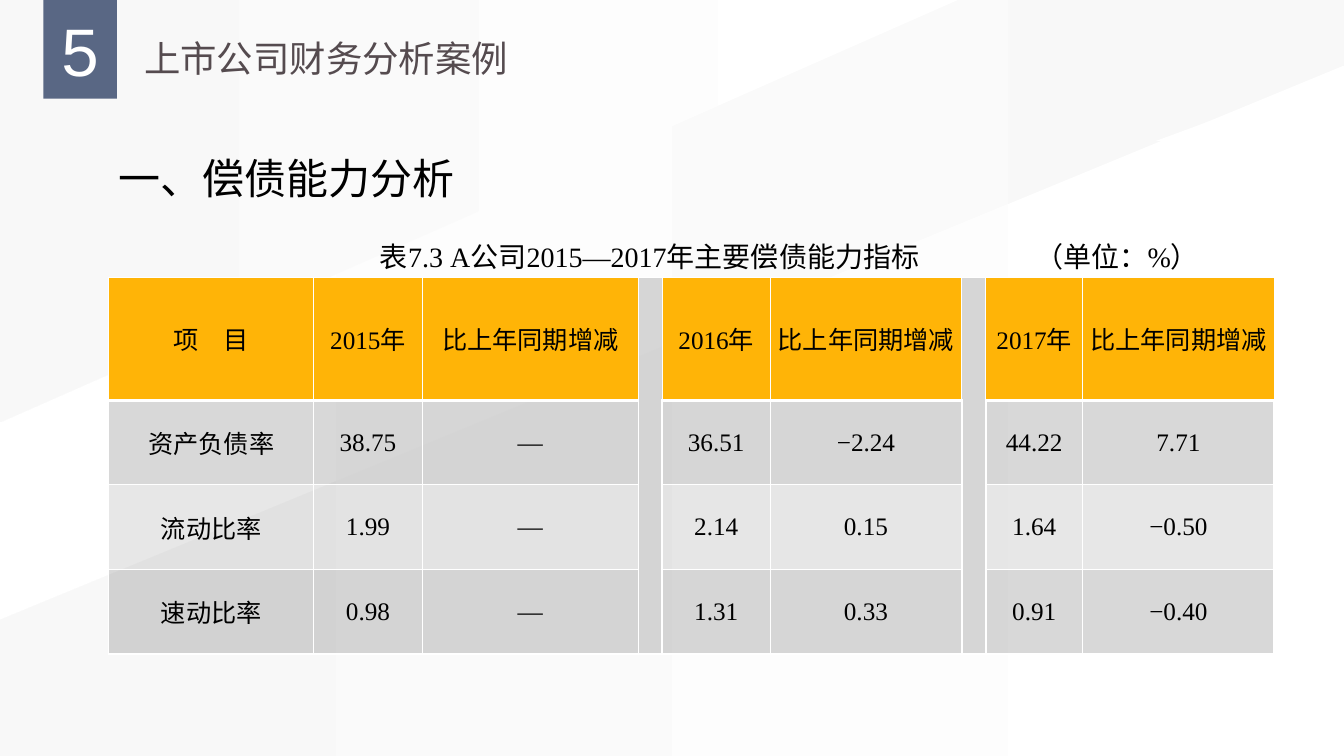
import dataclasses
import typing

import lxml.etree
import pptx
import pptx.dml.color
import pptx.enum.shapes
import pptx.enum.text
import pptx.oxml.ns
import pptx.util

Inches = pptx.util.Inches
Pt = pptx.util.Pt
qn = pptx.oxml.ns.qn
Align = pptx.enum.text.PP_ALIGN
Anchor = pptx.enum.text.MSO_ANCHOR


@dataclasses.dataclass(frozen=True)
class Theme:
    """Colours, fonts and type sizes of the page."""

    white: str = "FFFFFF"
    mist: str = "F8F8F8"
    slate: str = "596784"
    brown: str = "554B4F"
    black: str = "000000"
    amber: str = "FFB407"
    grey: str = "646464"
    sans: str = "Noto Sans CJK SC"
    serif: str = "Times New Roman"
    digit: str = "Arial"
    number_size: int = 48
    heading_size: int = 30
    title_size: int = 26
    caption_size: int = 20
    table_size: int = 18
    thin: float = 1
    medium: float = 1.5
    thick: float = 2.25


THEME = Theme()


@dataclasses.dataclass(frozen=True)
class Facet:
    """A background polygon shaded from its right side to its left."""

    points: tuple[tuple[float, float], ...]
    right: str
    left: str


@dataclasses.dataclass(frozen=True)
class Label:
    """A text box with one paragraph."""

    text: str
    place: tuple[float, float, float, float]
    font: str
    size: int
    colour: str
    align: Align = Align.LEFT
    anchor: Anchor = Anchor.TOP
    wrap: bool = True
    inset: bool = True
    line_spacing: float = 1.0
    space_after: float = 0
    tab: float | None = None


FACETS = (
    Facet(((0, 0), (13.33, 0), (13.33, 7.5), (0, 7.5)), THEME.mist, THEME.white),
    Facet(((0, 0), (9.5, 0), (0, 4.19)), THEME.white, THEME.mist),
    Facet(((0, 6.15), (13.33, 0.65), (13.33, 7.5), (0, 7.5)), THEME.white, THEME.mist),
    Facet(((11.46, 1.4), (13.33, 0.71), (13.33, 1.4)), THEME.white, THEME.white),
)
LABELS = (
    Label("上市公司财务分析案例", (1.33, 0.18, 3.85, 0.62), THEME.sans,
          THEME.title_size, THEME.brown, wrap=False, line_spacing=1.3),
    Label("5", (0.43, 0.09, 0.73, 0.81), THEME.digit, THEME.number_size,
          THEME.white, align=Align.CENTER, inset=False),
    Label("表7.3 A公司2015—2017年主要偿债能力指标\t（单位：%）", (3.67, 2.32, 8.58, 0.44),
          THEME.serif, THEME.caption_size, THEME.black, anchor=Anchor.MIDDLE, tab=6.5),
    Label("一、偿债能力分析", (1.08, 1.46, 4.07, 0.61), THEME.sans,
          THEME.heading_size, THEME.black, align=Align.JUSTIFY, space_after=6),
)
COLUMNS = (2.03, 1.08, 2.14, 0.04, 1.07, 1.9, 0.05, 0.96, 1.9)
ROWS = (1.22, 0.84, 0.84, 0.84)
GAPS = (3, 6)
CHANGE = "比上年同期增减"
RATIOS = (
    ("项　目", "2015年", CHANGE, "2016年", CHANGE, "2017年", CHANGE),
    ("资产负债率", "38.75", "—", "36.51", "−2.24", "44.22", "7.71"),
    ("流动比率", "1.99", "—", "2.14", "0.15", "1.64", "−0.50"),
    ("速动比率", "0.98", "—", "1.31", "0.33", "0.91", "−0.40"),
)


def rgb(colour: str) -> pptx.dml.color.RGBColor:
    """Turn a hex string into a colour."""
    return pptx.dml.color.RGBColor.from_string(colour)


def write(para: typing.Any, text: str, font: str, size: int, colour: str) -> None:
    """Fill a paragraph and format its run."""
    para.text = text
    span = para.runs[0]
    span.font.name = font
    span.font.size = Pt(size)
    span.font.color.rgb = rgb(colour)
    properties = span.font._element
    lxml.etree.SubElement(properties, qn("a:ea"), typeface=THEME.sans)


def draw_facet(page: typing.Any, facet: Facet) -> None:
    """Draw one shaded background polygon."""
    corners = [(Inches(x), Inches(y)) for x, y in facet.points]
    builder = page.shapes.build_freeform(*corners[0])
    builder.add_line_segments(corners[1:], close=True)
    shape = builder.convert_to_shape()
    shape.shadow.inherit = False
    shape.line.fill.background()
    if facet.right == facet.left:
        shape.fill.solid()
        shape.fill.fore_color.rgb = rgb(facet.right)
        return
    shape.fill.gradient()
    shape.fill.gradient_angle = 180
    for stop, colour in zip(shape.fill.gradient_stops, (facet.right, facet.left)):
        stop.color.rgb = rgb(colour)


def draw_badge(page: typing.Any) -> None:
    """Draw the block behind the chapter number."""
    badge = page.shapes.add_shape(
        pptx.enum.shapes.MSO_SHAPE.RECTANGLE, Inches(0.43), 0, Inches(0.73), Inches(0.98))
    badge.shadow.inherit = False
    badge.fill.solid()
    badge.fill.fore_color.rgb = rgb(THEME.slate)
    badge.line.fill.background()


def draw_label(page: typing.Any, label: Label) -> None:
    """Draw one text box."""
    box = page.shapes.add_textbox(*map(Inches, label.place))
    frame = box.text_frame
    frame.word_wrap = label.wrap
    frame.auto_size = pptx.enum.text.MSO_AUTO_SIZE.SHAPE_TO_FIT_TEXT
    frame.vertical_anchor = label.anchor
    if not label.inset:
        frame.margin_left = frame.margin_right = frame.margin_top = frame.margin_bottom = 0
    para = frame.paragraphs[0]
    write(para, label.text, label.font, label.size, label.colour)
    para.alignment = label.align
    para.line_spacing = label.line_spacing
    para.space_after = Pt(label.space_after)
    if label.tab is not None:
        stops = lxml.etree.SubElement(para._p.get_or_add_pPr(), qn("a:tabLst"))
        lxml.etree.SubElement(stops, qn("a:tab"), pos=str(Inches(label.tab)), algn="l")


def paint_cell(cell: typing.Any, row: int, column: int) -> None:
    """Set the fill and the four borders of a cell."""
    header = row == 0 and column not in GAPS
    cell.fill.solid()
    cell.fill.fore_color.rgb = rgb(THEME.amber if header else THEME.grey)
    properties = cell._tc.get_or_add_tcPr()
    if not header:
        alpha = 15 if row == 2 else 25
        colour = properties.find(".//" + qn("a:srgbClr"))
        lxml.etree.SubElement(colour, qn("a:alpha"), val=str(alpha * 1000))
    widths = {
        "L": THEME.medium if row and column in (4, 7) else THEME.thin,
        "R": THEME.medium if row and column in (5, 8) else THEME.thin,
        "T": THEME.thick if row == 1 else THEME.thin,
        "B": THEME.thick if row == 0 else THEME.thin,
    }
    for index, (side, width) in enumerate(widths.items()):
        line = properties.makeelement(qn(f"a:ln{side}"), {"w": str(Pt(width))})
        fill = lxml.etree.SubElement(line, qn("a:solidFill"))
        lxml.etree.SubElement(fill, qn("a:srgbClr"), val=THEME.white)
        properties.insert(index, line)


def draw_table(page: typing.Any) -> None:
    """Draw the table of solvency ratios."""
    table = page.shapes.add_table(
        len(ROWS), len(COLUMNS), Inches(1.08), Inches(2.75),
        Inches(sum(COLUMNS)), Inches(sum(ROWS))).table
    table.first_row = table.horz_banding = False
    for column, width in zip(table.columns, COLUMNS):
        column.width = Inches(width)
    for row, height in zip(table.rows, ROWS):
        row.height = Inches(height)
    for column in GAPS:
        table.cell(0, column).merge(table.cell(len(ROWS) - 1, column))
        paint_cell(table.cell(0, column), 0, column)
    filled = [column for column in range(len(COLUMNS)) if column not in GAPS]
    for row, values in enumerate(RATIOS):
        for column, value in zip(filled, values):
            cell = table.cell(row, column)
            paint_cell(cell, row, column)
            cell.vertical_anchor = Anchor.MIDDLE
            if column not in (4, 7):
                cell.margin_left = cell.margin_right = Inches(0.07)
            para = cell.text_frame.paragraphs[0]
            write(para, value, THEME.serif, THEME.table_size, THEME.black)
            para.alignment = Align.CENTER
            para.space_before = para.space_after = Pt(1.8 if row else 1.6)


def main() -> None:
    """Build the page and save the deck."""
    deck = pptx.Presentation()
    deck.slide_width, deck.slide_height = Inches(13.33), Inches(7.5)
    page = deck.slides.add_slide(deck.slide_layouts[6])
    for facet in FACETS:
        draw_facet(page, facet)
    draw_badge(page)
    for label in LABELS[:2]:
        draw_label(page, label)
    draw_table(page)
    for label in LABELS[2:]:
        draw_label(page, label)
    deck.save("out.pptx")


if __name__ == "__main__":
    main()
